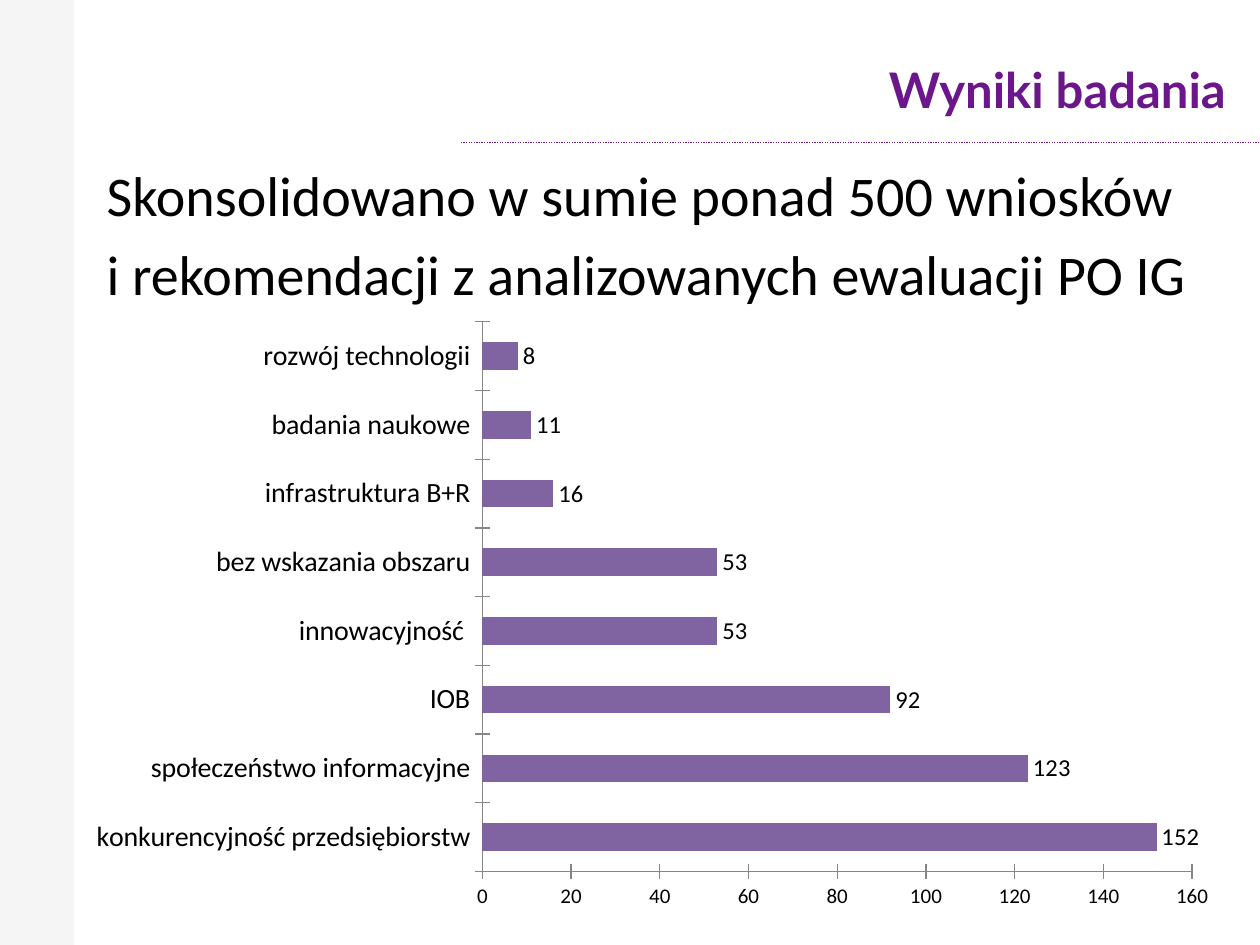
from lxml import etree
from pptx import Presentation
from pptx.chart.data import CategoryChartData
from pptx.dml.color import RGBColor
from pptx.enum.chart import XL_CHART_TYPE, XL_LABEL_POSITION, XL_TICK_MARK
from pptx.enum.dml import MSO_LINE
from pptx.enum.shapes import MSO_CONNECTOR, MSO_SHAPE
from pptx.enum.text import MSO_ANCHOR, PP_ALIGN
from pptx.oxml import parse_xml
from pptx.oxml.ns import nsdecls, qn
from pptx.util import Cm, Pt

BAR_CLUSTERED = XL_CHART_TYPE.BAR_CLUSTERED
OUTSIDE_END = XL_LABEL_POSITION.OUTSIDE_END
TICK_CROSS = XL_TICK_MARK.CROSS
DOTTED = MSO_LINE.ROUND_DOT
STRAIGHT = MSO_CONNECTOR.STRAIGHT
RECTANGLE = MSO_SHAPE.RECTANGLE
MIDDLE = MSO_ANCHOR.MIDDLE
TOP = MSO_ANCHOR.TOP
LEFT = PP_ALIGN.LEFT
RIGHT = PP_ALIGN.RIGHT

SLIDE_WIDTH, SLIDE_HEIGHT = 25.4, 19.05
PURPLE = "6B178B"
BLACK = "000000"
TITLE_FONT = {"name": "Lato", "size": Pt(28), "bold": True}
BODY_FONT = {"name": "Calibri", "size": Pt(32)}
PLOT_LAYOUT = {"x": 0.353, "y": 0.046, "w": 0.614, "h": 0.897}
AREAS = {
    "konkurencyjność przedsiębiorstw": 152,
    "społeczeństwo informacyjne": 123,
    "IOB": 92,
    "innowacyjność ": 53,
    "bez wskazania obszaru": 53,
    "infrastruktura B+R": 16,
    "badania naukowe": 11,
    "rozwój technologii": 8,
}


def color(value):
    return RGBColor.from_string(value)


def set_font(font, formats, font_color):
    for name, value in formats.items():
        setattr(font, name, value)
    font.color.rgb = color(font_color)


def add_text(slide, box, lines, formats, font_color, paragraph_formats, anchor):
    shape = slide.shapes.add_textbox(*map(Cm, box))
    frame = shape.text_frame
    frame.word_wrap = True
    frame.vertical_anchor = anchor
    frame.text = "\n".join(lines)
    for paragraph in frame.paragraphs:
        for name, value in paragraph_formats.items():
            setattr(paragraph, name, value)
        set_font(paragraph.runs[0].font, formats, font_color)


def add_side_band(slide, box):
    shape = slide.shapes.add_shape(RECTANGLE, *map(Cm, box))
    shape.shadow.inherit = False
    shape.fill.solid()
    shape.fill.fore_color.rgb = color("F5F5F5")
    shape.line.fill.background()


def add_header(slide, box):
    left, top, width, height = box
    add_text(slide, box, ["Wyniki badania"], TITLE_FONT, PURPLE, {"alignment": RIGHT}, MIDDLE)
    rule_top = Cm(top + 2.67)
    connector = slide.shapes.add_connector(
        STRAIGHT, Cm(left + 7.19), rule_top, Cm(SLIDE_WIDTH), rule_top)
    connector.line.color.rgb = color(PURPLE)
    connector.line.width = Pt(0.75)
    connector.line.dash_style = DOTTED
    etree.SubElement(connector._element.spPr, qn("a:effectLst"))


def add_summary(slide, box):
    lines = ["Skonsolidowano w sumie ponad 500 wniosków",
             "i rekomendacji z analizowanych ewaluacji PO IG"]
    add_text(slide, box, lines, BODY_FONT, BLACK,
             {"alignment": LEFT, "space_before": Pt(6.4)}, TOP)


def set_plot_layout(chart):
    plot_area = chart._chartSpace.chart.plotArea
    for layout in plot_area.findall(qn("c:layout")):
        plot_area.remove(layout)
    modes = '<c:xMode val="edge"/><c:yMode val="edge"/>'
    sizes = "".join(f'<c:{name} val="{value}"/>' for name, value in PLOT_LAYOUT.items())
    plot_area.insert(0, parse_xml(
        f'<c:layout {nsdecls("c")}><c:manualLayout><c:layoutTarget val="inner"/>'
        f'{modes}{sizes}</c:manualLayout></c:layout>'))


def add_area_chart(slide, box):
    data = CategoryChartData()
    data.categories = list(AREAS)
    data.add_series("Series 1", list(AREAS.values()))
    chart = slide.shapes.add_chart(BAR_CLUSTERED, *map(Cm, box), data).chart
    chart.has_legend = False
    chart.has_title = False
    set_font(chart.font, {"name": "Calibri", "size": Pt(10)}, BLACK)
    set_plot_layout(chart)

    for axis, size in ((chart.category_axis, 16), (chart.value_axis, 12)):
        axis.major_tick_mark = TICK_CROSS
        set_font(axis.tick_labels.font, {"name": "Calibri", "size": Pt(size)}, BLACK)
        axis.format.line.color.rgb = color("868686")
        axis.format.line.width = Pt(0.75)
    value_axis = chart.value_axis
    for name, value in {"minimum_scale": 0, "maximum_scale": 160, "major_unit": 20}.items():
        setattr(value_axis, name, value)
    value_axis.major_gridlines.format.line.color.rgb = color("FFFFFF")
    value_axis.major_gridlines.format.line.width = Pt(0.75)

    plot = chart.plots[0]
    plot.gap_width = 150
    plot.vary_by_categories = False
    plot.has_data_labels = True
    labels = plot.data_labels
    labels.show_value = True
    labels.position = OUTSIDE_END
    set_font(labels.font, {"name": "Calibri", "size": Pt(14)}, BLACK)
    bars = plot.series[0].format.fill
    bars.solid()
    bars.fore_color.rgb = color("8064A2")


def main():
    presentation = Presentation()
    presentation.slide_width = Cm(SLIDE_WIDTH)
    presentation.slide_height = Cm(SLIDE_HEIGHT)
    slide = presentation.slides.add_slide(presentation.slide_layouts[6])
    add_side_band(slide, (0, 0, 1.5, SLIDE_HEIGHT))
    add_header(slide, (2.1, 0.2, 22.86, 3.18))
    add_summary(slide, (1.9, 3.12, 23, 3.4))
    add_area_chart(slide, (1.5, 5.92, 23.3, 12.4))
    presentation.save("out.pptx")


if __name__ == "__main__":
    main()
